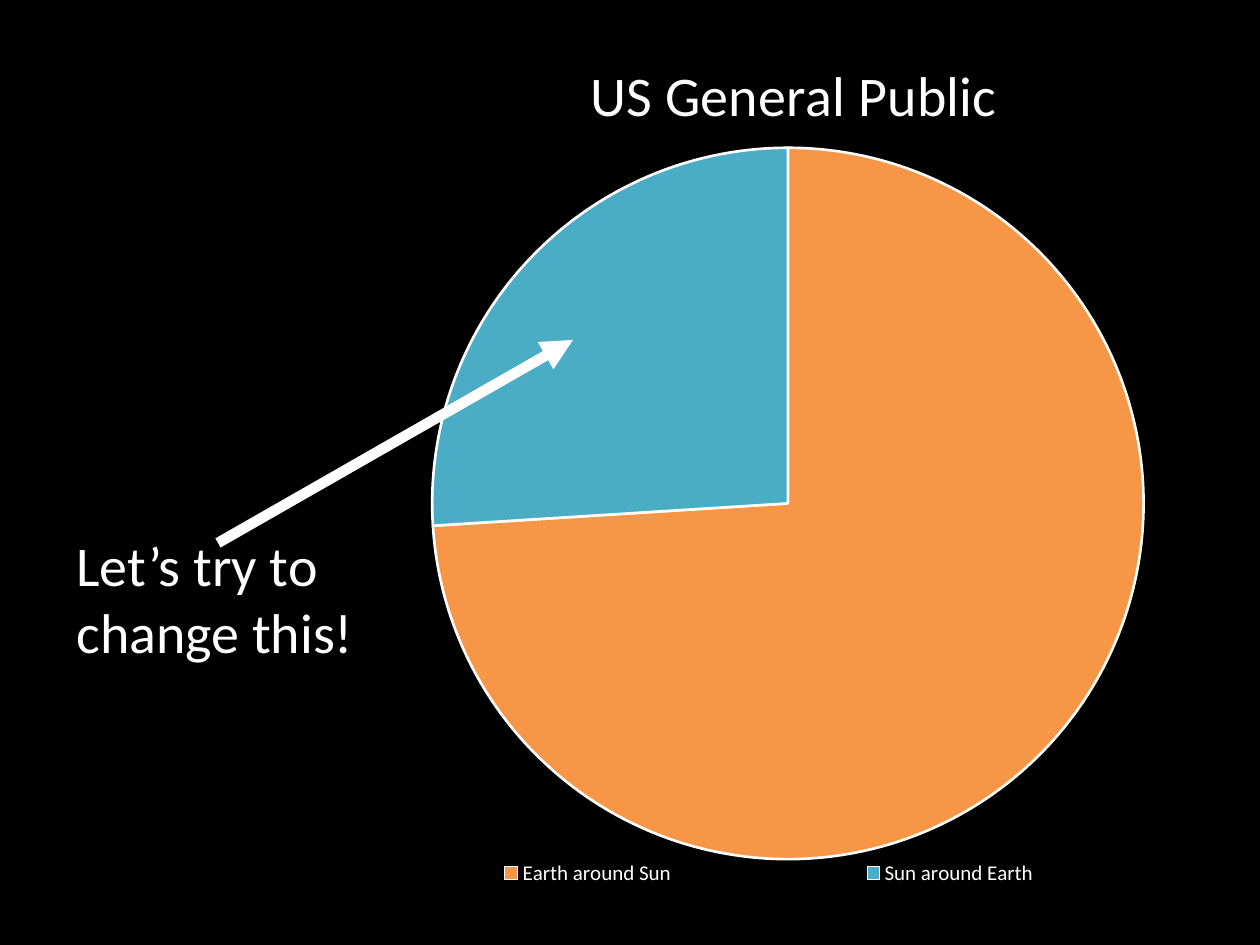
import lxml.etree
import pptx
import pptx.chart.data
import pptx.dml.color
import pptx.enum.chart
import pptx.enum.shapes
import pptx.oxml
import pptx.oxml.ns
import pptx.util

PX = 914400 // 126
BLACK = pptx.dml.color.RGBColor(0x00, 0x00, 0x00)
WHITE = pptx.dml.color.RGBColor(0xFF, 0xFF, 0xFF)
ORANGE = pptx.dml.color.RGBColor(0xF7, 0x96, 0x46)
TEAL = pptx.dml.color.RGBColor(0x4B, 0xAC, 0xC6)
qn = pptx.oxml.ns.qn


def write(frame, text, size=32, color=WHITE, name="Calibri"):
    span = frame.paragraphs[0].add_run()
    span.text = text
    span.font.size = pptx.util.Pt(size)
    span.font.color.rgb = color
    span.font.name = name
    span.font.bold = False


def place(element, index, **fractions):
    """Give a chart part a manual layout, in fractions of the chart area."""
    for old in element.findall(qn("c:layout")):
        element.remove(old)
    layout = lxml.etree.Element(qn("c:layout"))
    manual = lxml.etree.SubElement(layout, qn("c:manualLayout"))
    if element.tag == qn("c:plotArea"):
        lxml.etree.SubElement(manual, qn("c:layoutTarget")).set("val", "inner")
    for mode in ("xMode", "yMode"):
        lxml.etree.SubElement(manual, qn("c:" + mode)).set("val", "edge")
    for key, value in fractions.items():
        lxml.etree.SubElement(manual, qn("c:" + key)).set("val", str(value))
    element.insert(index, layout)


deck = pptx.Presentation()
deck.slide_width = pptx.util.Inches(10)
deck.slide_height = pptx.util.Inches(7.5)
page = deck.slides.add_slide(deck.slide_layouts[6])
page.background.fill.solid()
page.background.fill.fore_color.rgb = BLACK

# Pie chart
data = pptx.chart.data.CategoryChartData()
data.categories = ["Earth around Sun", "Sun around Earth"]
data.add_series("US General Public", (74, 26))
chart = page.shapes.add_chart(
    pptx.enum.chart.XL_CHART_TYPE.PIE, 316 * PX, 0, 944 * PX, 924 * PX, data
).chart
chart.font.size = pptx.util.Pt(10)
chart.font.name = "Calibri"
chart.font.color.rgb = WHITE
chart.has_title = True
write(chart.chart_title.text_frame, "US General Public")
chart.chart_title.include_in_layout = False

chart.has_legend = True
legend = chart.legend
legend.position = pptx.enum.chart.XL_LEGEND_POSITION.BOTTOM
legend.include_in_layout = False
legend.font.size = pptx.util.Pt(12)
legend.font.name = "Calibri"
legend.font.color.rgb = WHITE

plot = chart.plots[0]
plot.vary_by_categories = True
for index, color in enumerate((ORANGE, TEAL)):
    point = plot.series[0].points[index]
    point.format.fill.solid()
    point.format.fill.fore_color.rgb = color
    point.format.line.color.rgb = WHITE
    point.format.line.width = pptx.util.Pt(1.5)

plot_area = chart.element.find(".//" + qn("c:plotArea"))
place(chart.chart_title.element if hasattr(chart.chart_title, "element")
      else chart.element.find(".//" + qn("c:title")), 1, x=0.28, y=0.05)
place(plot_area, 0, x=0.12, y=0.16, w=0.76, h=0.77)
place(chart.element.find(".//" + qn("c:legend")), 1, x=0, y=0.93, w=0.96, h=0.03)

# Callout
box = page.shapes.add_textbox(64 * PX, 524 * PX, 335 * PX, 217 * PX)
box.text_frame.word_wrap = True
write(box.text_frame, "Let’s try to change this!")

arrow = page.shapes.add_connector(
    pptx.enum.shapes.MSO_CONNECTOR.STRAIGHT, 218 * PX, 543 * PX, 573 * PX, 340 * PX
)
arrow.line.color.rgb = WHITE
arrow.line.width = pptx.util.Pt(6)
lxml.etree.SubElement(arrow.line._get_or_add_ln(), qn("a:tailEnd")).set("type", "triangle")
lxml.etree.SubElement(arrow._element.spPr, qn("a:effectLst"))

deck.save("out.pptx")
